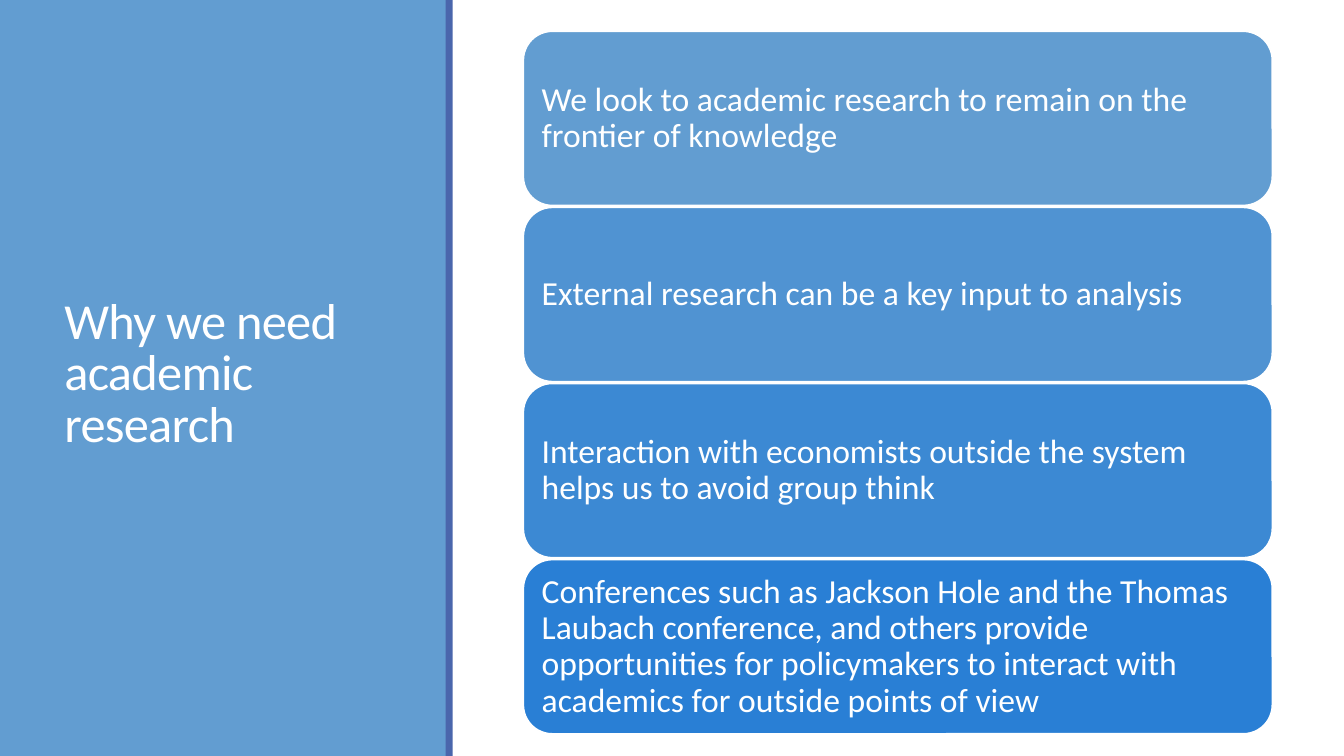
from pptx import Presentation
from pptx.dml.color import RGBColor
from pptx.enum.shapes import MSO_SHAPE
from pptx.enum.text import MSO_ANCHOR, PP_ALIGN
from pptx.util import Inches, Pt

SLIDE_WIDTH, SLIDE_HEIGHT = 13.33, 7.5
COLORS = {"white": "FFFFFF", "panel": "629DD1", "stripe": "4A66AC"}
PANEL_WIDTH, STRIPE_WIDTH = 4.43, 0.07
CARD_LEFT, CARD_TOP, CARD_WIDTH, CARD_HEIGHT = 5.19, 0.31, 7.43, 1.73
CARD_PITCH = 1.747

TITLE = "Why we need academic research"
REASONS = [
    ("629DD1", "We look to academic research to remain on the frontier of knowledge"),
    ("5093D2", "External research can be a key input to analysis"),
    ("3C89D3", "Interaction with economists outside the system helps us to avoid group think"),
    ("297FD5", "Conferences such as Jackson Hole and the Thomas Laubach conference, "
               "and others provide opportunities for policymakers to interact with "
               "academics for outside points of view"),
]


def set_attributes(target, values):
    for name, value in values.items():
        setattr(target, name, value)


def add_block(slide, kind, box, color):
    """Add a filled preset shape without outline or shadow."""
    shape = slide.shapes.add_shape(kind, *map(Inches, box))
    shape.shadow.inherit = False
    shape.fill.solid()
    shape.fill.fore_color.rgb = RGBColor.from_string(color)
    shape.line.fill.background()
    return shape


def write_text(shape, text, size, line_spacing, side_inset, letter_spacing=0):
    set_attributes(shape.text_frame, {
        "word_wrap": True,
        "vertical_anchor": MSO_ANCHOR.MIDDLE,
        "margin_left": Inches(side_inset),
        "margin_right": Inches(side_inset),
        "margin_top": Inches(0.05),
        "margin_bottom": Inches(0.05),
    })
    paragraph = shape.text_frame.paragraphs[0]
    set_attributes(paragraph, {"alignment": PP_ALIGN.LEFT, "line_spacing": line_spacing})
    run = paragraph.add_run()
    run.text = text
    set_attributes(run.font, {"name": "Calibri", "size": Pt(size)})
    run.font.color.rgb = RGBColor.from_string(COLORS["white"])
    if letter_spacing:
        run._r.get_or_add_rPr().set("spc", str(round(letter_spacing * 100)))


def add_title_panel(slide):
    add_block(slide, MSO_SHAPE.RECTANGLE, (0, 0, PANEL_WIDTH, SLIDE_HEIGHT), COLORS["panel"])
    title = slide.shapes.add_textbox(*map(Inches, (0.54, 0.57, 3.37, 6.31)))
    write_text(title, TITLE, 36, 0.85, 0.1, letter_spacing=-0.5)
    add_block(slide, MSO_SHAPE.RECTANGLE,
              (PANEL_WIDTH - 0.01, 0, STRIPE_WIDTH, SLIDE_HEIGHT), COLORS["stripe"])


def add_reason_card(slide, row, color, text):
    box = (CARD_LEFT, CARD_TOP + row * CARD_PITCH, CARD_WIDTH, CARD_HEIGHT)
    card = add_block(slide, MSO_SHAPE.ROUNDED_RECTANGLE, box, color)
    card.line.color.rgb = RGBColor.from_string(COLORS["white"])
    card.line.width = Pt(1.25)
    # The rounded corners add about 0.08 inches to the text inset.
    write_text(card, text, 24, 0.9, 0.1)


def main():
    presentation = Presentation()
    set_attributes(presentation, {"slide_width": Inches(SLIDE_WIDTH),
                                  "slide_height": Inches(SLIDE_HEIGHT)})
    slide = presentation.slides.add_slide(presentation.slide_layouts[6])
    add_title_panel(slide)
    for row, (color, text) in enumerate(REASONS):
        add_reason_card(slide, row, color, text)
    presentation.save("out.pptx")


if __name__ == "__main__":
    main()
